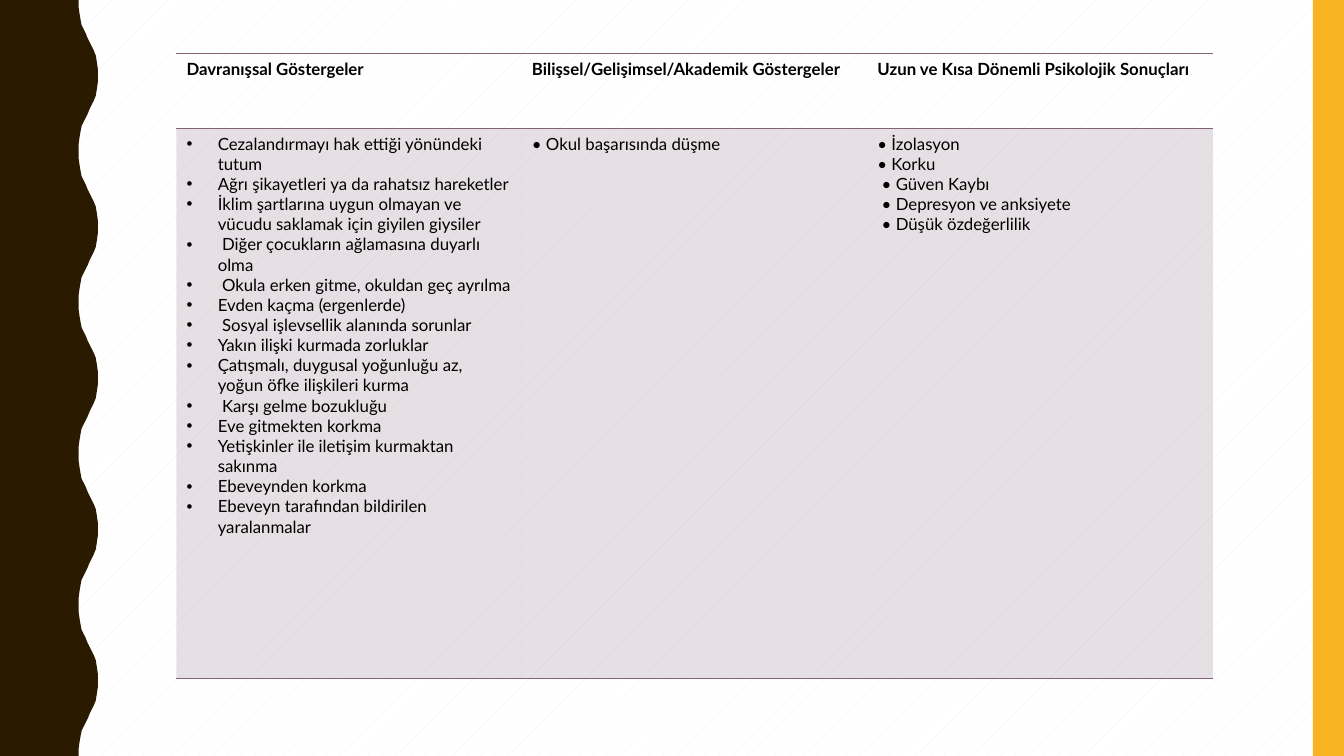
from lxml.etree import SubElement
from pptx import Presentation
from pptx.dml.color import RGBColor
from pptx.enum.dml import MSO_PATTERN
from pptx.enum.shapes import MSO_SHAPE
from pptx.oxml.ns import qn
from pptx.util import Inches, Pt

WIDTH, HEIGHT = 13.33, 7.5
BROWN, AMBER, PLUM, BLACK = "2A1A00", "F8B323", "826276", "000000"
NO_GRID_STYLE = "{2D5ABB26-0587-4C30-8999-92F81FD0307C}"
FONT = {"name": "Lato", "size": Pt(12)}
INDENT = 0.31

WAVE_COUNT = 5
WAVE_X = [0.78, 0.78, 0.79, 0.8, 0.81, 0.83, 0.85, 0.87, 0.89, 0.91, 0.93, 0.95, 0.96, 0.97, 0.97]
WAVE_Y = [0, 0.07, 0.14, 0.2, 0.25, 0.29, 0.33, 0.38, 0.42, 0.46, 0.5, 0.55, 0.61, 0.68, 0.75]

HEADINGS = [
    "Davranışsal Göstergeler",
    "Bilişsel/Gelişimsel/Akademik Göstergeler",
    "Uzun ve Kısa Dönemli Psikolojik Sonuçları",
]
BEHAVIOURS = [
    "Cezalandırmayı hak ettiği yönündeki tutum",
    "Ağrı şikayetleri ya da rahatsız hareketler",
    "İklim şartlarına uygun olmayan ve vücudu saklamak için giyilen giysiler",
    " Diğer çocukların ağlamasına duyarlı olma",
    " Okula erken gitme, okuldan geç ayrılma",
    "Evden kaçma (ergenlerde)",
    " Sosyal işlevsellik alanında sorunlar",
    "Yakın ilişki kurmada zorluklar",
    "Çatışmalı, duygusal yoğunluğu az, yoğun öfke ilişkileri kurma",
    " Karşı gelme bozukluğu",
    "Eve gitmekten korkma",
    "Yetişkinler ile iletişim kurmaktan sakınma",
    "Ebeveynden korkma",
    "Ebeveyn tarafından bildirilen yaralanmalar",
]
COGNITIVE = ["• Okul başarısında düşme"]
OUTCOMES = [
    "• İzolasyon",
    "• Korku",
    " • Güven Kaybı",
    " • Depresyon ve anksiyete",
    " • Düşük özdeğerlilik",
]


def colour(value):
    return RGBColor.from_string(value)


def paint(shape, value):
    shape.shadow.inherit = False
    shape.fill.solid()
    shape.fill.fore_color.rgb = colour(value)
    shape.line.fill.background()


def set_background(page):
    fill = page.background.fill
    fill.patterned()
    fill.pattern = MSO_PATTERN.PERCENT_5
    fill.fore_color.rgb = colour("F3F3F2")
    fill.back_color.rgb = colour("FFFFFF")


def add_wavy_edge(page, left, top, height):
    wave = height / WAVE_COUNT
    points = []
    for index in range(WAVE_COUNT):
        start = top + index * wave
        points += [(left + x, start + y) for x, y in zip(WAVE_X, WAVE_Y)]
        points += [(left + x, start + wave / 2 + y) for x, y in zip(WAVE_X[::-1], WAVE_Y)]
    points.append((left, top + height))
    outline = page.shapes.build_freeform(Inches(left), Inches(top), scale=1.0)
    outline.add_line_segments([(Inches(x), Inches(y)) for x, y in points], close=True)
    paint(outline.convert_to_shape(), BROWN)


def add_side_bar(page, left, top, width, height):
    box = map(Inches, (left, top, width, height))
    paint(page.shapes.add_shape(MSO_SHAPE.RECTANGLE, *box), AMBER)


def add_border(cell, side):
    line = SubElement(cell._tc.get_or_add_tcPr(), qn(f"a:{side}"), w=str(Pt(1)))
    SubElement(SubElement(line, qn("a:solidFill")), qn("a:srgbClr"), val=PLUM)


def tint(cell, percent):
    cell.fill.solid()
    cell.fill.fore_color.rgb = colour(PLUM)
    tone = cell._tc.tcPr.find(qn("a:solidFill")).find(qn("a:srgbClr"))
    SubElement(tone, qn("a:alpha"), val=str(percent * 1000))


def add_bullet(para):
    settings = para._p.get_or_add_pPr()
    settings.set("marL", str(Inches(INDENT)))
    settings.set("indent", str(-Inches(INDENT)))
    SubElement(settings, qn("a:buFont"), typeface="Arial")
    SubElement(settings, qn("a:buChar"), char="•")


def write_cell(cell, lines, bold=False, bulleted=False):
    frame = cell.text_frame
    for index, line in enumerate(lines):
        para = frame.add_paragraph() if index else frame.paragraphs[0]
        if bulleted:
            add_bullet(para)
        span = para.add_run()
        span.text = line
        for name, value in {**FONT, "bold": bold}.items():
            setattr(span.font, name, value)
        span.font.color.rgb = colour(BLACK)


def add_indicator_table(page, left, top, width, height):
    box = map(Inches, (left, top, width, height))
    table = page.shapes.add_table(2, len(HEADINGS), *box).table
    table._tbl.tblPr.find(qn("a:tableStyleId")).text = NO_GRID_STYLE
    for row, share in zip(table.rows, (0.12, 0.88)):
        row.height = Inches(height * share)
    for column, lines in enumerate((BEHAVIOURS, COGNITIVE, OUTCOMES)):
        table.columns[column].width = Inches(width / len(HEADINGS))
        heading, body = table.cell(0, column), table.cell(1, column)
        for side in ("lnT", "lnB"):
            add_border(heading, side)
            add_border(body, side)
        heading.fill.background()
        tint(body, 20)
        write_cell(heading, [HEADINGS[column]], bold=True)
        write_cell(body, lines, bulleted=lines is BEHAVIOURS)


def main():
    deck = Presentation()
    deck.slide_width, deck.slide_height = Inches(WIDTH), Inches(HEIGHT)
    page = deck.slides.add_slide(deck.slide_layouts[6])
    set_background(page)
    add_wavy_edge(page, 0, 0, HEIGHT)
    add_side_bar(page, WIDTH - 0.31, 0, 0.31, HEIGHT)
    add_indicator_table(page, 1.75, 0.53, 10.28, 6.2)
    deck.save("out.pptx")


if __name__ == "__main__":
    main()
